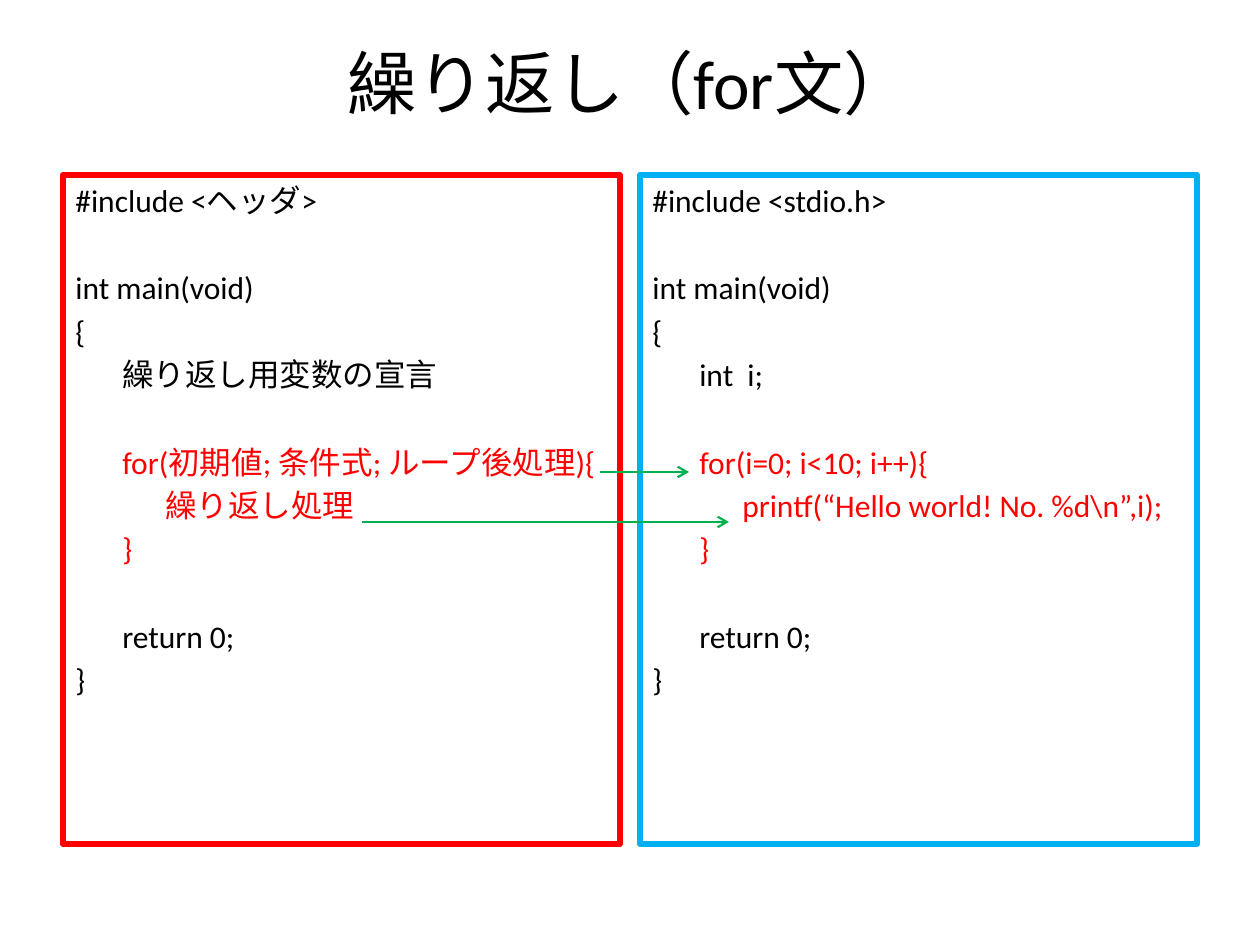
from lxml import etree
from pptx import Presentation
from pptx.dml.color import RGBColor
from pptx.enum.shapes import MSO_CONNECTOR, MSO_SHAPE
from pptx.enum.text import MSO_ANCHOR, PP_ALIGN
from pptx.oxml.ns import qn
from pptx.util import Emu, Pt

PX = 914400 // 126
RECT = MSO_SHAPE.RECTANGLE
LINE = MSO_CONNECTOR.STRAIGHT
TOP, MIDDLE = MSO_ANCHOR.TOP, MSO_ANCHOR.MIDDLE
LEFT, CENTER = PP_ALIGN.LEFT, PP_ALIGN.CENTER

BLACK, RED, BLUE, GREEN = "000000", "FF0000", "00B0F0", "00B050"
FONT = "Calibri"
INDENTS = (0, 47, 90)
SPACE, GAP = 3.2, 28.3

# Each line: indent level, text, colour, whether a gap comes before it
HEAD = [(0, "int main(void)", BLACK, True), (0, "{", BLACK, False)]
TAIL = [
    (1, "}", RED, False),
    (1, "return 0;", BLACK, True),
    (0, "}", BLACK, False),
]
SYNTAX = [
    (0, "#include <ヘッダ>", BLACK, False),
    *HEAD,
    (1, "繰り返し用変数の宣言", BLACK, False),
    (1, "for(初期値; 条件式; ループ後処理){", RED, True),
    (2, "繰り返し処理", RED, False),
    *TAIL,
]
SAMPLE = [
    (0, "#include <stdio.h>", BLACK, False),
    *HEAD,
    (1, "int  i;", BLACK, False),
    (1, "for(i=0; i<10; i++){", RED, True),
    (2, "printf(“Hello world! No. %d\\n”,i);", RED, False),
    *TAIL,
]


def px(*vals):
    return [Emu(v * PX) for v in vals]


def rgb(code):
    return RGBColor.from_string(code)


def style(para, size, color):
    for run in para.runs:
        run.font.name = FONT
        run.font.size = Pt(size)
        run.font.color.rgb = rgb(color)


def add_title(slide, text):
    frame = slide.shapes.add_textbox(*px(63, 38, 1134, 87)).text_frame
    frame.word_wrap = True
    frame.vertical_anchor = MIDDLE
    para = frame.paragraphs[0]
    para.text = text
    para.alignment = CENTER
    style(para, 39.6, BLACK)


def add_code(slide, left, border, lines):
    """Add a framed panel of indented code."""
    box = slide.shapes.add_shape(RECT, *px(left, 175, 557, 669))
    box.shadow.inherit = False
    box.fill.background()
    box.line.color.rgb = rgb(border)
    box.line.width = Pt(3.5)
    frame = box.text_frame
    frame.word_wrap = True
    frame.vertical_anchor = TOP
    frame.text = "\n".join(text for _, text, _, _ in lines)
    for para, (level, _, color, gap) in zip(frame.paragraphs, lines):
        para.alignment = LEFT
        para.space_before = Pt(GAP if gap else SPACE)
        props = para._p.get_or_add_pPr()
        props.set("marL", str(INDENTS[level] * PX))
        props.set("indent", "0")
        style(para, 18, color)


def add_arrow(slide, start, end, y):
    arrow = slide.shapes.add_connector(LINE, *px(start, y, end, y))
    arrow.line.color.rgb = rgb(GREEN)
    arrow.line.width = Pt(1.25)
    tip = etree.SubElement(arrow.line._get_or_add_ln(), qn("a:tailEnd"))
    tip.set("type", "arrow")
    etree.SubElement(arrow._element.spPr, qn("a:effectLst"))


def main():
    deck = Presentation()
    deck.slide_width, deck.slide_height = px(1260, 945)
    slide = deck.slides.add_slide(deck.slide_layouts[6])
    add_title(slide, "繰り返し（for文）")
    add_code(slide, 63, RED, SYNTAX)
    add_code(slide, 640, BLUE, SAMPLE)
    add_arrow(slide, 362, 729, 522)
    add_arrow(slide, 600, 689, 472)
    deck.save("out.pptx")


if __name__ == "__main__":
    main()
